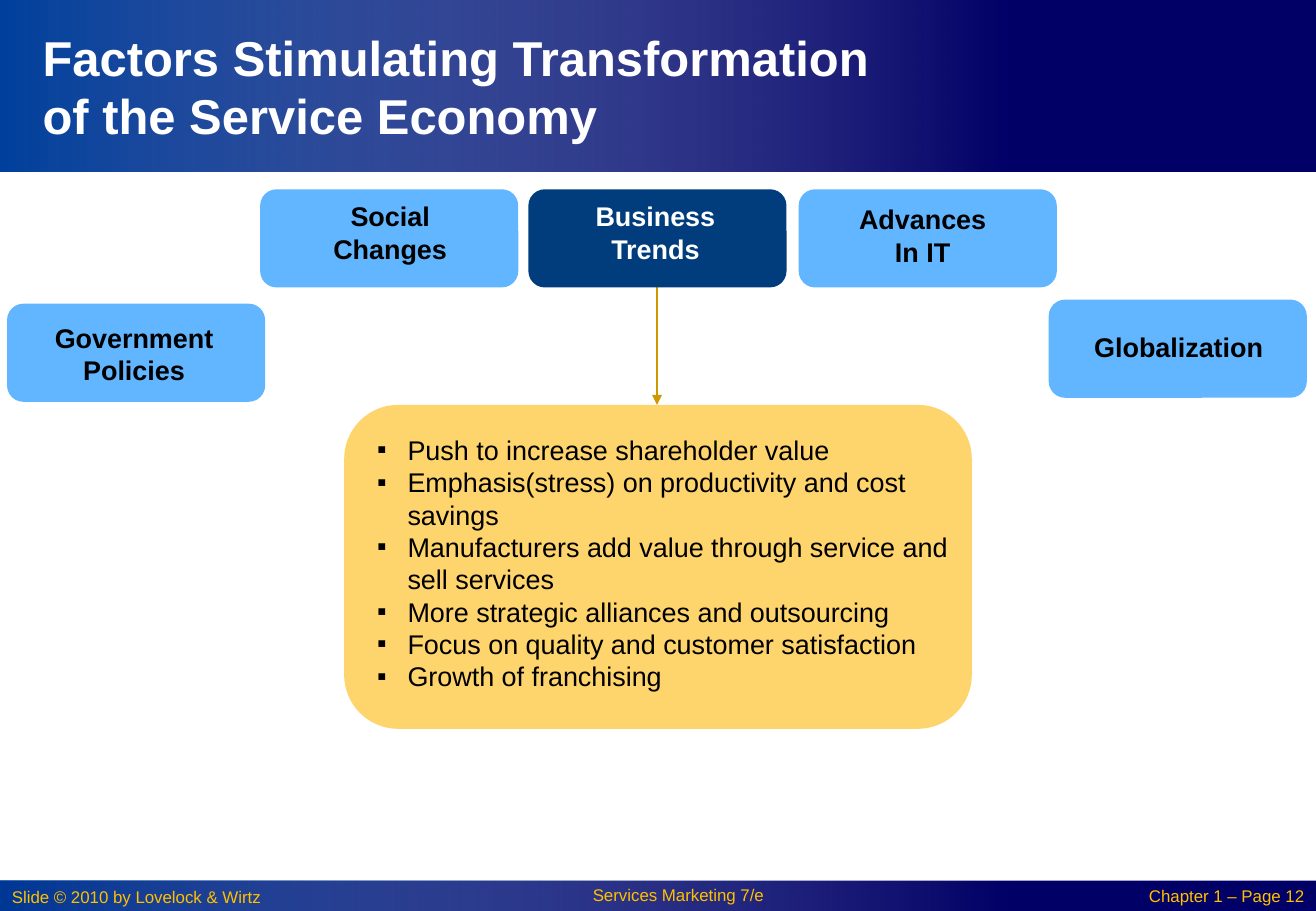
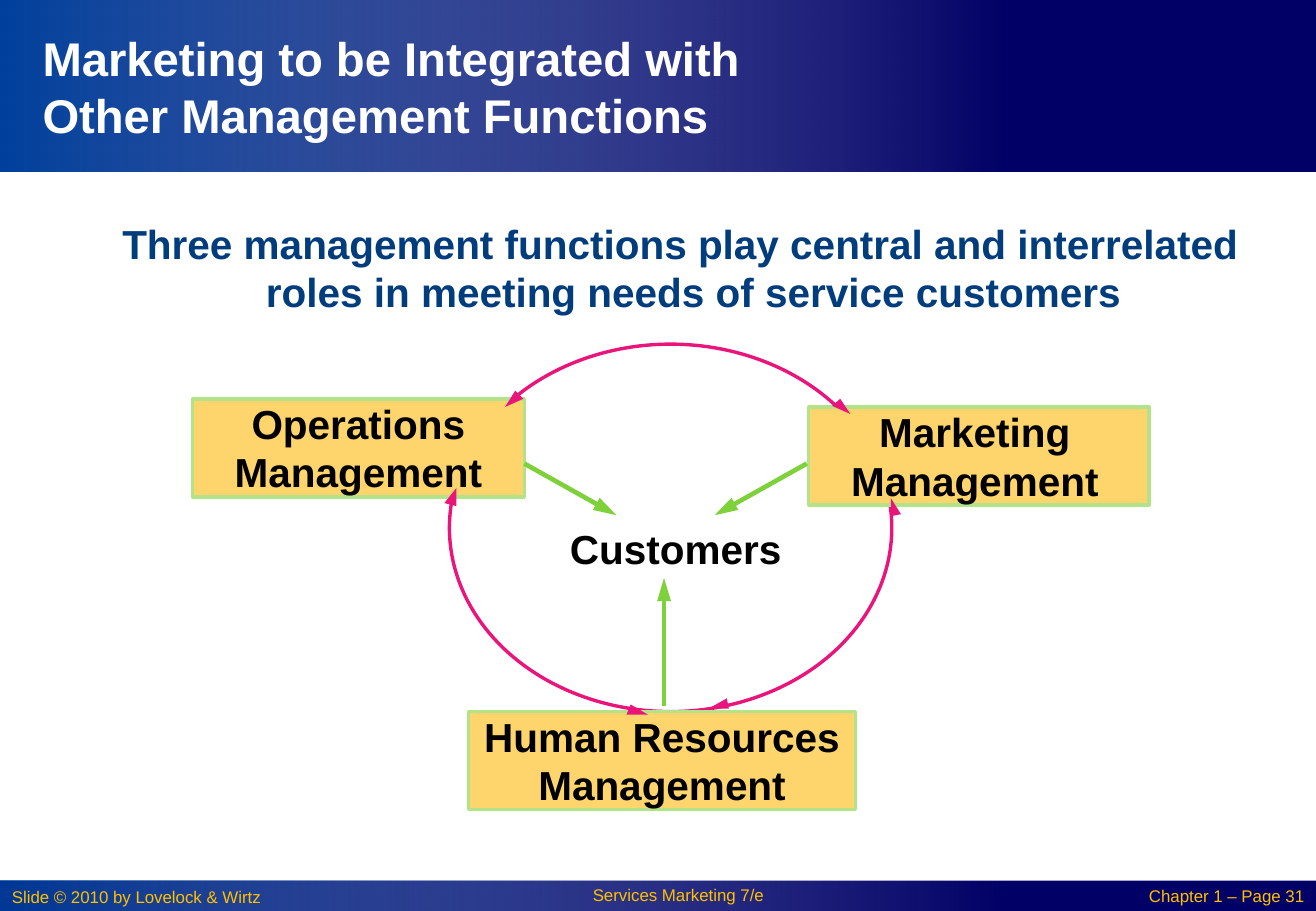
from lxml import etree
from pptx import Presentation
from pptx.dml.color import RGBColor
from pptx.enum.shapes import MSO_CONNECTOR, MSO_SHAPE
from pptx.enum.text import MSO_ANCHOR, MSO_AUTO_SIZE, PP_ALIGN
from pptx.oxml.ns import qn
from pptx.util import Pt

PX = 7620  # EMU per px, 120 px to the inch
RECT, ROUND, OVAL = MSO_SHAPE.RECTANGLE, MSO_SHAPE.ROUNDED_RECTANGLE, MSO_SHAPE.OVAL
LEFT, CENTER, RIGHT = PP_ALIGN.LEFT, PP_ALIGN.CENTER, PP_ALIGN.RIGHT
TOP, MIDDLE = MSO_ANCHOR.TOP, MSO_ANCHOR.MIDDLE
FONT = "Arial"
NAVY, GLOW, BLUE, SKY, SAND = "000066", "0152AB", "013C7D", "61B6FF", "FED46C"
GOLD, AMBER, PINK = "CC9900", "FFC000", "EA157A"
GREEN, PALE_GREEN = "7FD13B", "B2E389"
WHITE, BLACK = "FFFFFF", "000000"
INSETS = (12, 6, 12, 6)  # left, top, right, bottom

# Shared content
WIDTH, HEIGHT, GLOW_WIDTH = 1300, 900, 1000
BANDS = [(870, 30, 69), (0, 170, 80)]  # top, height, glow opacity in percent
FOOTERS = [("Slide © 2010 by Lovelock & Wirtz", (0, 870, 310, 34), LEFT, 1),
           ("Services Marketing 7/e", (510, 870, 320, 30), CENTER, 0.9)]
PAGE_BOX = (1090, 871, 210, 30)

# Slide 1 content: text, left, top, fill, text colour, shift of the text
FACTOR_SIZE = (255, 97)
FACTORS = [
    ("Business\nTrends", 522, 187, BLUE, WHITE, (-2, -6)),
    ("Social\nChanges", 257, 187, SKY, BLACK, (1, -6)),
    ("Advances\nIn IT", 789, 187, SKY, BLACK, (-5, -3)),
    ("Globalization", 1036, 296, SKY, BLACK, (1, -2)),
    ("Government\nPolicies", 7, 300, SKY, BLACK, (-2, 1)),
]
TREND_CARD = (340, 400, 620, 320)
TRENDS = [
    "Push to increase shareholder value",
    "Emphasis(stress) on productivity and cost savings",
    "Manufacturers add value through service and sell services",
    "More strategic alliances and outsourcing",
    "Focus on quality and customer satisfaction",
    "Growth of franchising",
]

# Slide 2 content
MESSAGE = ("Three management functions play central and interrelated "
           "roles in meeting needs of service customers")
CYCLE = (444, 340, 437, 363)
CUSTOMERS = (563, 518, 214, 48)
FUNCTIONS = [
    ("Operations\nManagement", (190, 394, 328, 97), 0),
    ("Marketing\nManagement", (799, 402, 336, 97), 8),
    ("Human Resources\nManagement", (463, 703, 382, 97), 0),
]
CYCLE_HEADS = [  # tip, then the two base corners
    ((640, 706), (623, 696), (619, 706)),
    ((451, 482), (439, 497), (451, 500)),
    ((880, 492), (880, 510), (890, 508)),
    ((700, 700), (720, 700), (718, 690)),
    ((499, 402), (517, 394), (509, 386)),
    ((840, 409), (830, 394), (822, 401)),
]
TO_CUSTOMERS = [((656, 697), (656, 571)), ((518, 458), (609, 509)),
                ((797, 458), (706, 509))]


def rgb(value):
    return RGBColor.from_string(value)


def emu(lengths):
    return [length * PX for length in lengths]


def write(frame, text, size, color, bold=False, align=LEFT, anchor=TOP,
          insets=INSETS, spacing=None):
    frame.text = text
    frame.word_wrap = True
    frame.auto_size = MSO_AUTO_SIZE.NONE
    frame.vertical_anchor = anchor
    (frame.margin_left, frame.margin_top,
     frame.margin_right, frame.margin_bottom) = emu(insets)
    for paragraph in frame.paragraphs:
        paragraph.alignment = align
        if spacing:
            paragraph.line_spacing = spacing
        for run in paragraph.runs:
            run.font.name, run.font.size, run.font.bold = FONT, Pt(size), bold
            run.font.color.rgb = rgb(color)


def add_text(slide, box, *args, **style):
    label = slide.shapes.add_textbox(*emu(box))
    write(label.text_frame, *args, **style)
    return label


def paint(shape, fill=None, line=None, width=2):
    shape.shadow.inherit = False
    if fill:
        shape.fill.solid()
        shape.fill.fore_color.rgb = rgb(fill)
    if line:
        shape.line.color.rgb = rgb(line)
        shape.line.width = Pt(width)
    else:
        shape.line.fill.background()
    return shape


def add_block(slide, kind, box, fill, line=None):
    return paint(slide.shapes.add_shape(kind, *emu(box)), fill, line)


def add_arrow(slide, start, end, color, width, length):
    arrow = slide.shapes.add_connector(MSO_CONNECTOR.STRAIGHT, *emu(start + end))
    arrow.line.color.rgb = rgb(color)
    arrow.line.width = Pt(width)
    etree.SubElement(arrow.line._get_or_add_ln(), qn("a:tailEnd"),
                     type="triangle", w="med", len=length)
    etree.SubElement(arrow.element.spPr, qn("a:effectLst"))


def indent(paragraph, left, first):
    props = paragraph._p.get_or_add_pPr()
    props.set("marL", str(left * PX))
    props.set("indent", str(first * PX))
    return props


def add_glow(slide, top, height, opacity):
    glow = add_block(slide, RECT, (0, top, GLOW_WIDTH, height), None)
    glow.fill.gradient()
    glow.fill.gradient_angle = 0
    for stop, color, alpha in zip(glow.fill.gradient_stops, (GLOW, WHITE), (opacity, 0)):
        stop.color.rgb = rgb(color)
        tint = stop._gs.find(qn("a:srgbClr"))
        etree.SubElement(tint, qn("a:alpha"), val=str(alpha * 1000))
    return glow


def dress_layout(layout, slide):
    """Build the bands and footers with the slide's tools, then hand them to the layout."""
    for placeholder in list(layout.placeholders)[1:]:
        placeholder.element.getparent().remove(placeholder.element)
    shared = []
    for top, height, opacity in BANDS:
        shared.append(add_block(slide, RECT, (0, top, WIDTH, height), NAVY))
        shared.append(add_glow(slide, top, height, opacity))
    for text, box, align, spacing in FOOTERS:
        shared.append(add_text(slide, box, text, 10, AMBER, align=align, spacing=spacing))
    for number, shape in enumerate(shared, 101):
        shape.element.nvSpPr.cNvPr.set("id", str(number))
        layout.shapes.element.append(shape.element)


def add_slide(deck, layout, title, size, title_width, page):
    slide = deck.slides.add_slide(layout)
    heading = slide.shapes.title
    heading.left, heading.top, heading.width, heading.height = emu((30, 30, title_width, 110))
    write(heading.text_frame, title, size, WHITE, bold=True, anchor=MIDDLE)
    add_text(slide, PAGE_BOX, f"Chapter 1 – Page {page}", 10, AMBER,
             align=RIGHT, spacing=0.9)
    return slide


def fill_factors(slide):
    add_arrow(slide, (649, 280), (649, 400), GOLD, 1.25, "med")
    for text, left, top, fill, color, (dx, dy) in FACTORS:
        factor = add_block(slide, ROUND, (left, top, *FACTOR_SIZE), fill)
        write(factor.text_frame, text, 16, color, bold=True, align=CENTER, anchor=MIDDLE,
              insets=(12 + dx, 8 + dy, 12 - dx, 8 - dy))
    card = add_block(slide, ROUND, TREND_CARD, SAND)
    write(card.text_frame, "\n".join(TRENDS), 16, BLACK, anchor=MIDDLE,
          insets=(17, 0, 0, 8))
    for paragraph in card.text_frame.paragraphs:
        props = indent(paragraph, 30, -30)
        etree.SubElement(props, qn("a:buFont"), typeface=FONT)
        etree.SubElement(props, qn("a:buChar"), char="▪")


def fill_functions(slide):
    message = add_text(slide, (40, 210, 1230, 120), MESSAGE, 24, BLUE, bold=True,
                       align=CENTER, insets=(11, 6, 11, 6))
    indent(message.text_frame.paragraphs[0], 60, -26)
    add_block(slide, OVAL, CYCLE, WHITE, PINK)
    add_text(slide, CUSTOMERS, "Customers", 24, BLACK, bold=True, insets=(0, 0, 0, 0))
    for text, box, right_inset in FUNCTIONS:
        function = add_block(slide, RECT, box, SAND, PALE_GREEN)
        write(function.text_frame, text, 24, BLACK, bold=True, align=CENTER,
              insets=(0, 0, right_inset, 0))
    for tip, *base in CYCLE_HEADS:
        outline = slide.shapes.build_freeform(*tip, scale=PX)
        outline.add_line_segments(base, close=True)
        paint(outline.convert_to_shape(), PINK)
    for start, end in TO_CUSTOMERS:
        add_arrow(slide, start, end, GREEN, 2.75, "lg")


def main():
    deck = Presentation()
    deck.slide_width, deck.slide_height = emu((WIDTH, HEIGHT))
    layout = deck.slide_layouts[5]
    factors = add_slide(deck, layout, "Factors Stimulating Transformation "
                        "of the Service Economy", 29, 850, 12)
    dress_layout(layout, factors)
    fill_factors(factors)
    functions = add_slide(deck, layout, "Marketing to be Integrated with "
                          "Other Management Functions", 28, 840, 31)
    fill_functions(functions)
    deck.save("out.pptx")


if __name__ == "__main__":
    main()
